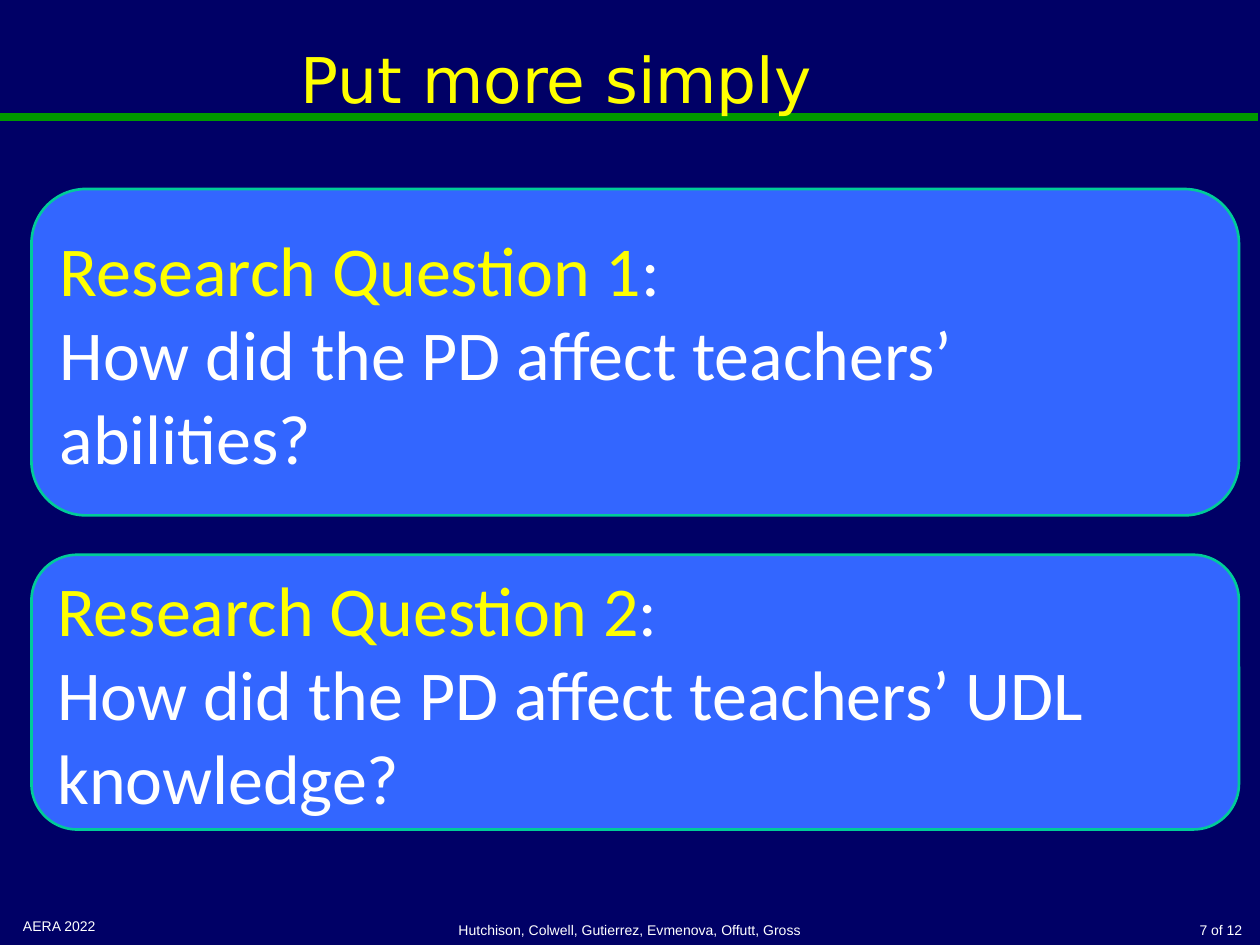
import pptx
import pptx.util
import pptx.dml.color
import pptx.enum.shapes
import pptx.enum.text
import lxml.etree
from dataclasses import dataclass

Pt = pptx.util.Pt
ALIGN = pptx.enum.text.PP_ALIGN
ANCHOR = pptx.enum.text.MSO_ANCHOR


@dataclass(frozen=True)
class Theme:
    background: str = "000066"
    rule: str = "009900"
    panel: str = "3366FF"
    panel_edge: str = "00CC99"
    accent: str = "FFFF00"
    text: str = "FFFFFF"
    title_font: str = "DejaVu Sans"
    body_font: str = "Calibri"
    footer_font: str = "Arial"
    title_size: int = 36
    body_size: int = 40
    footer_size: int = 8


theme = Theme()


def rgb(value):
    return pptx.dml.color.RGBColor.from_string(value)


def style(run, font, size, color):
    run.font.name = font
    run.font.size = Pt(size)
    run.font.color.rgb = rgb(color)


presentation = pptx.Presentation()
presentation.slide_width, presentation.slide_height = Pt(720), Pt(540)
slide = presentation.slides.add_slide(presentation.slide_layouts[6])
slide.background.fill.solid()
slide.background.fill.fore_color.rgb = rgb(theme.background)

# Green rule under the title
rule = slide.shapes.add_connector(
    pptx.enum.shapes.MSO_CONNECTOR.STRAIGHT, Pt(0), Pt(67), Pt(719), Pt(67))
rule.line.color.rgb = rgb(theme.rule)
rule.line.width = Pt(4.5)
lxml.etree.SubElement(rule.line._get_or_add_ln().getparent(),
                      pptx.oxml.ns.qn("a:effectLst"))

# Title and footer: text, left, top, width, height, alignment, anchor, font, size, colour
footer = (theme.footer_font, theme.footer_size, theme.text)
labels = [
    ("Put more simply", 6, 0, 624, 90, ALIGN.CENTER, ANCHOR.MIDDLE,
     theme.title_font, theme.title_size, theme.accent),
    ("AERA 2022", 6, 520.5, 168, 19, ALIGN.LEFT, ANCHOR.TOP, *footer),
    ("Hutchison, Colwell, Gutierrez, Evmenova, Offutt, Gross",
     246, 520.5, 228, 19.5, ALIGN.CENTER, ANCHOR.BOTTOM, *footer),
    ("7", 567, 520.5, 130, 19.5, ALIGN.RIGHT, ANCHOR.BOTTOM, *footer),
    ("of 12", 684, 523, 33, 17, ALIGN.RIGHT, ANCHOR.TOP, *footer),
]
for words, left, top, width, height, alignment, anchor, font, size, color in labels:
    label = slide.shapes.add_textbox(Pt(left), Pt(top), Pt(width), Pt(height)).text_frame
    label.word_wrap = True
    label.vertical_anchor = anchor
    label.text = words
    label.paragraphs[0].alignment = alignment
    style(label.paragraphs[0].runs[0], font, size, color)

# Research question panels
questions = [
    ("Research Question 1", "How did the PD affect teachers’ abilities?", 108, 186.5),
    ("Research Question 2", "How did the PD affect teachers’ UDL knowledge?", 317, 157),
]
for heading, question, top, height in questions:
    panel = slide.shapes.add_shape(
        pptx.enum.shapes.MSO_SHAPE.ROUNDED_RECTANGLE, Pt(18), Pt(top), Pt(690), Pt(height))
    panel.shadow.inherit = False
    panel.fill.solid()
    panel.fill.fore_color.rgb = rgb(theme.panel)
    panel.line.color.rgb = rgb(theme.panel_edge)
    panel.line.width = Pt(1.5)

    frame = panel.text_frame
    frame.word_wrap = True
    frame.vertical_anchor = ANCHOR.MIDDLE
    heading_line, question_line = frame.paragraphs[0], frame.add_paragraph()
    for line, words, color in [(heading_line, heading, theme.accent),
                               (heading_line, ":", theme.text),
                               (question_line, question, theme.text)]:
        line.alignment = ALIGN.LEFT
        run = line.add_run()
        run.text = words
        style(run, theme.body_font, theme.body_size, color)

presentation.save("out.pptx")
